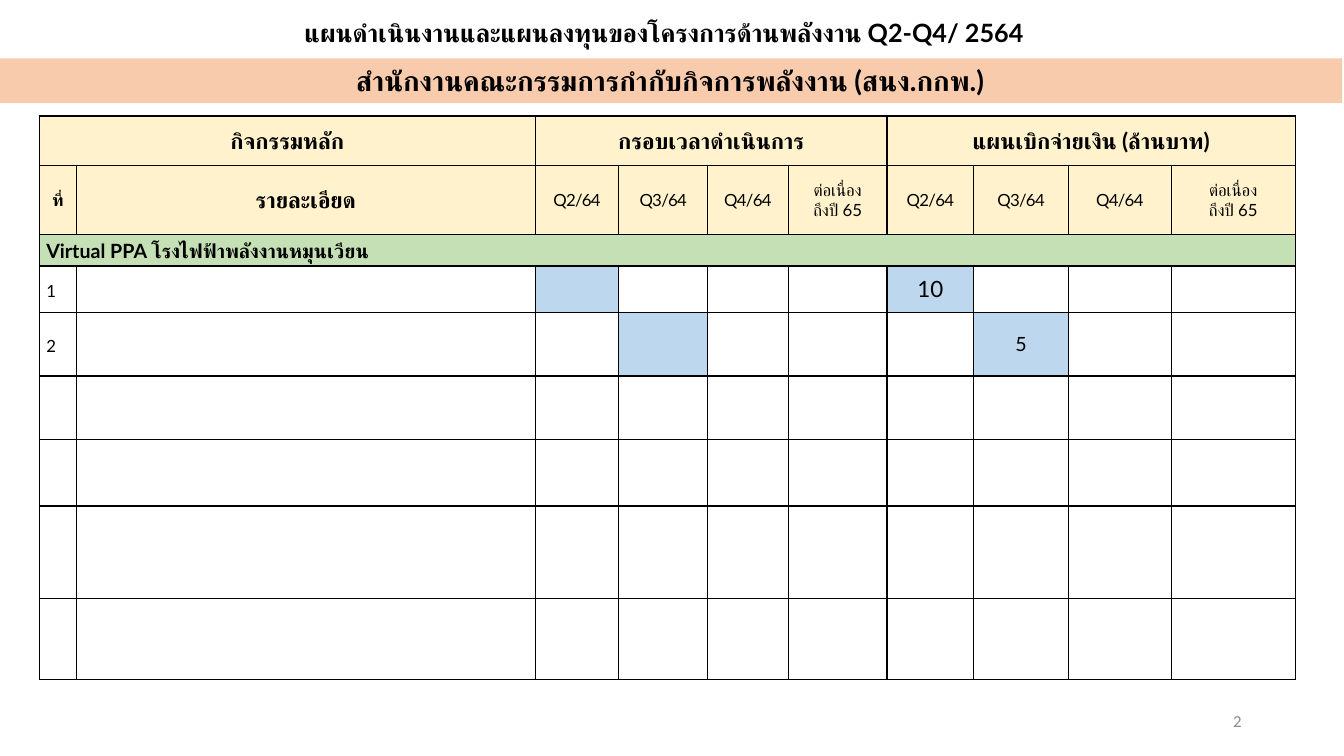
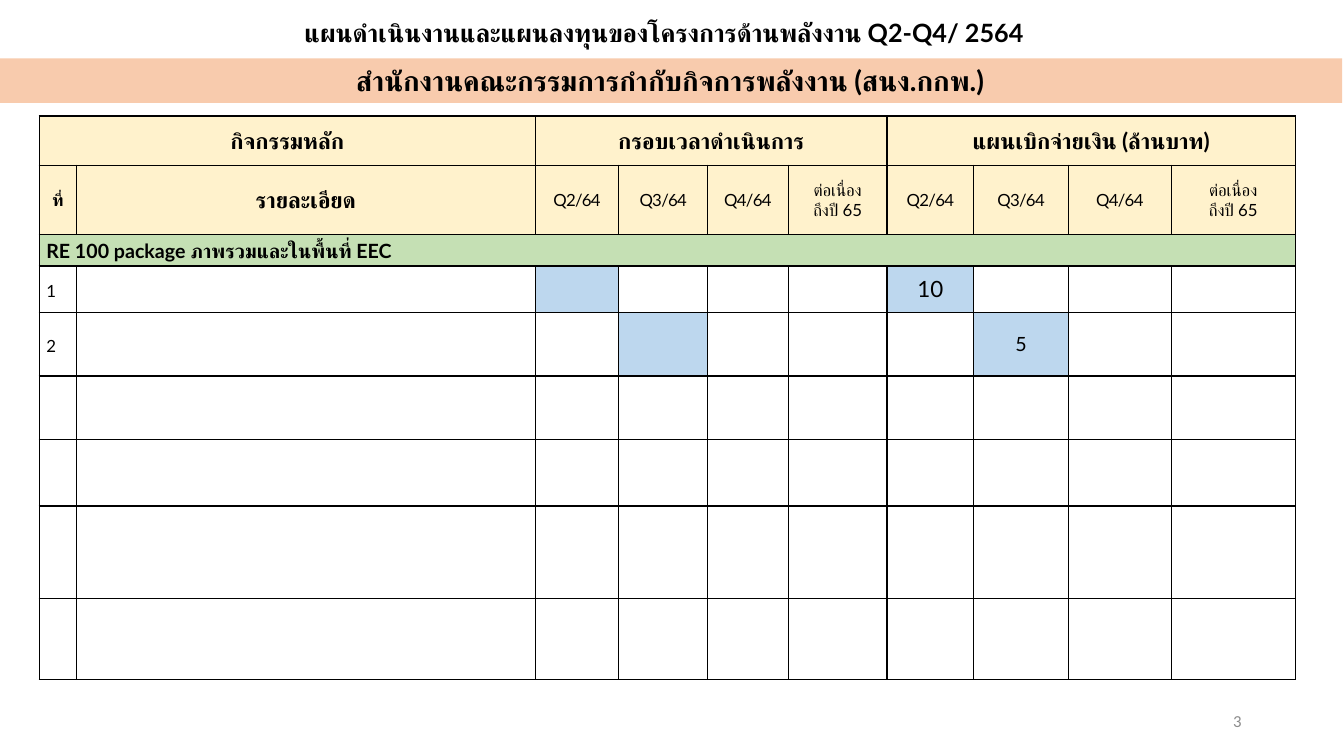
from dataclasses import dataclass

from lxml.etree import SubElement
from pptx import Presentation
from pptx.dml.color import RGBColor as Rgb
from pptx.enum.shapes import MSO_SHAPE as Kind
from pptx.enum.text import MSO_ANCHOR as Anchor, PP_ALIGN as Align
from pptx.oxml.ns import qn
from pptx.util import Pt

COLORS = {
    "ink": "000000",
    "page": "8C8C8C",
    "band": "F8CBAD",
    "head": "FFF2CC",
    "group": "C5E0B4",
    "mark": "BDD7EE",
}
TITLE = "แผนดำเนินงานและแผนลงทุนของโครงการด้านพลังงาน Q2-Q4/ 2564"
OFFICE = "สำนักงานคณะกรรมการกำกับกิจการพลังงาน (สนง.กกพ.)"
TOPICS = [
    (2, "Virtual PPA โรงไฟฟ้าพลังงานหมุนเวียน"),
    (3, "RE 100 package ภาพรวมและในพื้นที่ EEC"),
]
COLS = [26.6, 327.6, 59.8, 63.4, 57.6, 70.6, 61.9, 67.7, 73.4, 88.6]
ROWS = [35.3, 49.7, 22.3, 33.1, 45.4, 45.4, 47.5, 66.2, 57.6]
MARGINS = {"margin_left": 5, "margin_right": 5, "margin_top": 0, "margin_bottom": 0}


@dataclass(frozen=True)
class Style:
    size: float
    bold: bool = False
    color: str = "ink"
    face: str = "Lato"
    align: Align = Align.CENTER
    track: float = 0
    space: float = 1


@dataclass(frozen=True)
class Box:
    left: float
    top: float
    width: float
    height: float


@dataclass(frozen=True)
class Entry:
    row: int
    col: int
    text: str
    style: Style
    fill: str | None = None
    span: int = 1


HEAD = Style(16, True)
SMALL = Style(12)
TIGHT = Style(12, track=-0.5)
ITEM = Style(12, align=Align.LEFT, space=1.15)
QUARTERS = [("Q2/64", TIGHT), ("Q3/64", TIGHT), ("Q4/64", TIGHT),
            ("ต่อเนื่อง\nถึงปี 65", SMALL)]
ENTRIES = [
    Entry(0, 0, "กิจกรรมหลัก", HEAD, "head", 2),
    Entry(0, 2, "กรอบเวลาดำเนินการ", HEAD, "head", 4),
    Entry(0, 6, "แผนเบิกจ่ายเงิน (ล้านบาท)", HEAD, "head", 4),
    Entry(1, 0, "ที่", Style(12, True), "head"),
    Entry(1, 1, "รายละเอียด", HEAD, "head"),
    *(Entry(1, start + i, text, style, "head")
      for start in (2, 6) for i, (text, style) in enumerate(QUARTERS)),
    Entry(3, 0, "1", ITEM),
    Entry(3, 2, "", SMALL, "mark"),
    Entry(3, 6, "10", Style(16), "mark"),
    Entry(4, 0, "2", ITEM),
    Entry(4, 3, "", SMALL, "mark"),
    Entry(4, 7, "5", Style(14), "mark"),
]


def paint(fill, color: str) -> None:
    fill.solid()
    fill.fore_color.rgb = Rgb.from_string(COLORS[color])


def write(frame, text: str, style: Style) -> None:
    frame.text = text
    looks = {"size": Pt(style.size), "bold": style.bold, "name": style.face}
    for para in frame.paragraphs:
        para.alignment = style.align
        para.line_spacing = style.space
        for run in para.runs:
            for key, value in looks.items():
                setattr(run.font, key, value)
            run.font.color.rgb = Rgb.from_string(COLORS[style.color])
            props = run._r.get_or_add_rPr()
            SubElement(props, qn("a:cs"), typeface=style.face)
            if style.track:
                props.set("spc", str(int(style.track * 100)))


def add_text(slide, box: Box, text: str, style: Style,
             anchor: Anchor = Anchor.TOP, fill: str | None = None) -> None:
    place = [Pt(box.left), Pt(box.top), Pt(box.width), Pt(box.height)]
    if fill:
        shape = slide.shapes.add_shape(Kind.RECTANGLE, *place)
        shape.shadow.inherit = False
        shape.line.fill.background()
        paint(shape.fill, fill)
    else:
        shape = slide.shapes.add_textbox(*place)
    frame = shape.text_frame
    frame.word_wrap = True
    frame.vertical_anchor = anchor
    write(frame, text, style)


def frame_cell(cell) -> None:
    props = cell._tc.get_or_add_tcPr()
    for side in ("lnL", "lnR", "lnT", "lnB"):
        line = SubElement(props, qn(f"a:{side}"), w=str(Pt(1)))
        solid = SubElement(line, qn("a:solidFill"))
        SubElement(solid, qn("a:srgbClr"), val=COLORS["ink"])
    for key, value in MARGINS.items():
        setattr(cell, key, Pt(value))
    cell.vertical_anchor = Anchor.MIDDLE
    cell.fill.background()


def add_plan(slide, topic: str) -> None:
    table = slide.shapes.add_table(
        len(ROWS), len(COLS), Pt(28.1), Pt(82.8), Pt(sum(COLS)), Pt(sum(ROWS))).table
    table.first_row = table.horz_banding = False
    for col, width in zip(table.columns, COLS):
        col.width = Pt(width)
    for row, height in zip(table.rows, ROWS):
        row.height = Pt(height)
    for cell in table.iter_cells():
        frame_cell(cell)
    group = Entry(2, 0, topic, Style(14, True, align=Align.LEFT), "group", len(COLS))
    for entry in [*ENTRIES, group]:
        cell = table.cell(entry.row, entry.col)
        if entry.span > 1:
            cell.merge(table.cell(entry.row, entry.col + entry.span - 1))
        if entry.text:
            write(cell.text_frame, entry.text, entry.style)
        if entry.fill:
            paint(cell.fill, entry.fill)


def add_page(deck, number: int, topic: str) -> None:
    slide = deck.slides.add_slide(deck.slide_layouts[6])
    add_text(slide, Box(678, 500.4, 216, 28.8), str(number),
             Style(12, color="page", face="Calibri", align=Align.RIGHT), Anchor.MIDDLE)
    add_plan(slide, topic)
    add_text(slide, Box(-5.8, 8.6, 960, 51.1), TITLE, Style(18, True))
    add_text(slide, Box(-1.4, 41.8, 960, 31.7), OFFICE, Style(20, True), fill="band")


def main() -> None:
    deck = Presentation()
    deck.slide_width, deck.slide_height = Pt(960), Pt(540)
    for number, topic in TOPICS:
        add_page(deck, number, topic)
    deck.save("out.pptx")


if __name__ == "__main__":
    main()
